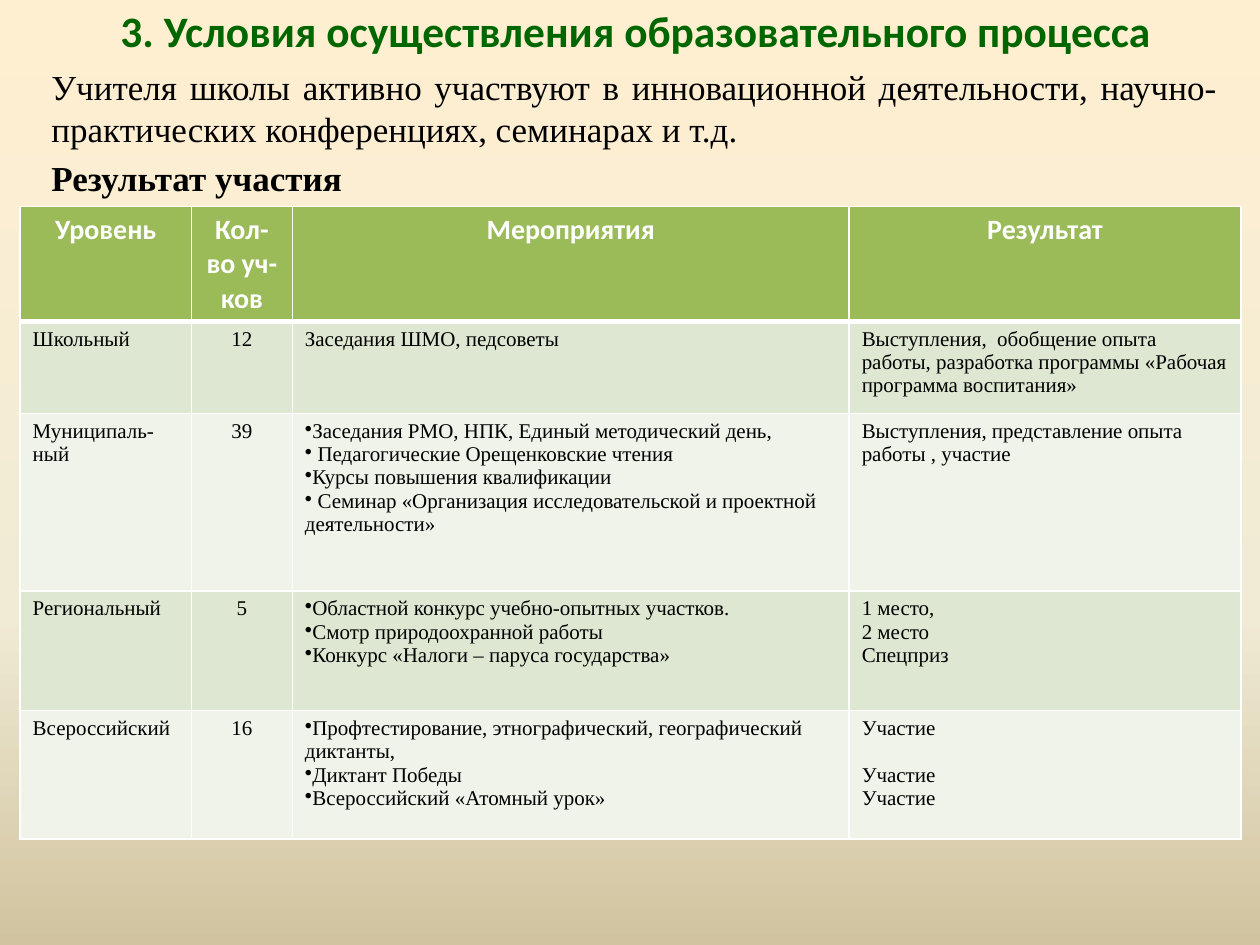
from copy import deepcopy
from dataclasses import dataclass

from lxml import etree
from pptx import Presentation
from pptx.dml.color import RGBColor
from pptx.enum.text import MSO_ANCHOR, MSO_AUTO_SIZE, PP_ALIGN
from pptx.oxml.ns import qn
from pptx.slide import Slide
from pptx.table import _Cell
from pptx.text.text import _Paragraph
from pptx.util import Inches, Pt

LEFT, CENTER, JUSTIFY = PP_ALIGN.LEFT, PP_ALIGN.CENTER, PP_ALIGN.JUSTIFY
MIDDLE = MSO_ANCHOR.MIDDLE
NO_FIT = MSO_AUTO_SIZE.NONE


@dataclass(frozen=True)
class TextStyle:
    """Font, size, colour and weight of a run."""
    font: str
    size: float
    color: str
    bold: bool = False


@dataclass(frozen=True)
class Theme:
    """Colours and type styles of the slide."""
    title: TextStyle = TextStyle("Calibri", 24.8, "006600", True)
    body: TextStyle = TextStyle("Times New Roman", 20, "000000")
    strong: TextStyle = TextStyle("Times New Roman", 20, "000000", True)
    header: TextStyle = TextStyle("Calibri", 16, "FFFFFF", True)
    cell: TextStyle = TextStyle("Times New Roman", 12, "000000")
    header_fill: str = "9BBB59"
    bands: tuple[str, str] = ("DEE7D1", "EFF3EA")
    border: str = "FFFFFF"
    background: tuple[tuple[float, str], ...] = (
        (0, "FFEFD1"), (0.65, "F0EBD5"), (1, "D1C39F"))


@dataclass(frozen=True)
class Level:
    """One table row: level, participants, events and results."""
    name: str
    count: str
    events: tuple[str, ...]
    results: tuple[str, ...]
    height: float
    bulleted: bool = True
    result_gap: float = 0


THEME = Theme()
TITLE = "3. Условия осуществления образовательного процесса"
INTRO = (
    ("Учителя школы активно участвуют в инновационной деятельности, "
     "научно-практических конференциях, семинарах и т.д.", THEME.body),
    ("Результат участия", THEME.strong),
)
HEADERS = ("Уровень", "Кол-во уч-ков", "Мероприятия", "Результат")
COLUMN_WIDTHS = (1.36, 0.8, 4.42, 3.11)
HEADER_HEIGHT = 0.91
LEVELS = (
    Level("Школьный", "12", ("Заседания ШМО, педсоветы",),
          ("Выступления,  обобщение опыта работы, разработка программы "
           "«Рабочая программа воспитания»",), 0.73, bulleted=False),
    Level("Муниципаль-ный", "39",
          ("Заседания РМО, НПК, Единый методический день,",
           " Педагогические Орещенковские чтения",
           "Курсы повышения квалификации",
           " Семинар «Организация исследовательской и проектной деятельности»"),
          ("Выступления, представление опыта работы , участие",), 1.41),
    Level("Региональный", "5",
          ("Областной конкурс учебно-опытных участков.",
           "Смотр природоохранной работы",
           "Конкурс «Налоги – паруса государства»"),
          ("1 место,", "2 место", "Спецприз"), 0.95),
    Level("Всероссийский", "16",
          ("Профтестирование, этнографический, географический диктанты,",
           "Диктант Победы",
           "Всероссийский «Атомный урок»"),
          ("Участие", "Участие", "Участие"), 1.02, result_gap=13.3),
)


def add_run(p: _Paragraph, text: str, style: TextStyle) -> None:
    """Append a styled run to a paragraph."""
    r = p.add_run()
    r.text = text
    r.font.name = style.font
    r.font.size = Pt(style.size)
    r.font.bold = style.bold
    r.font.color.rgb = RGBColor.from_string(style.color)


def set_background(s: Slide) -> None:
    """Fill the slide background with a vertical gradient."""
    fill = s.background.fill
    fill.gradient()
    fill.gradient_angle = 270
    stops = s._element.find(".//" + qn("a:gsLst"))
    stops.append(deepcopy(stops[-1]))
    for stop, (position, color) in zip(fill.gradient_stops, THEME.background):
        stop.position = position
        stop.color.rgb = RGBColor.from_string(color)


def add_title(s: Slide) -> None:
    """Place and format the slide title."""
    sp = s.shapes.title
    sp.left, sp.top = Inches(0.55), Inches(0)
    sp.width, sp.height = Inches(9), Inches(0.56)
    tf = sp.text_frame
    tf.word_wrap, tf.auto_size, tf.vertical_anchor = True, NO_FIT, MIDDLE
    p = tf.paragraphs[0]
    p.alignment, p.line_spacing = CENTER, 0.8
    add_run(p, TITLE, THEME.title)


def add_intro(s: Slide) -> None:
    """Add the introductory paragraphs above the table."""
    sp = s.shapes.add_textbox(Inches(0.31), Inches(0.47), Inches(9.45), Inches(1.41))
    tf = sp.text_frame
    tf.word_wrap = True
    for i, (text, style) in enumerate(INTRO):
        p = tf.add_paragraph() if i else tf.paragraphs[0]
        p.alignment, p.space_before = JUSTIFY, Pt(4)
        add_run(p, text, style)


def style_cell(cell: _Cell, fill: str, top: float = 1, bottom: float = 1) -> None:
    """Set the borders and fill of a cell."""
    tc_pr = cell._tc.get_or_add_tcPr()
    for side, width in (("L", 1), ("R", 1), ("T", top), ("B", bottom)):
        ln = etree.SubElement(tc_pr, qn(f"a:ln{side}"), w=str(Pt(width)))
        solid = etree.SubElement(ln, qn("a:solidFill"))
        etree.SubElement(solid, qn("a:srgbClr"), val=THEME.border)
    cell.fill.solid()
    cell.fill.fore_color.rgb = RGBColor.from_string(fill)


def write_cell(cell: _Cell, lines: tuple[str, ...], style: TextStyle,
               align: PP_ALIGN = LEFT, bulleted: bool = False, gap: float = 0) -> None:
    """Write one paragraph per line, with a gap after the first."""
    tf = cell.text_frame
    for i, text in enumerate(lines):
        p = tf.add_paragraph() if i else tf.paragraphs[0]
        p.alignment = align
        if gap and i == 1:
            p.space_before = Pt(gap)
        if bulleted:
            p_pr = p._p.get_or_add_pPr()
            p_pr.set("marL", "0")
            p_pr.set("indent", "0")
            etree.SubElement(p_pr, qn("a:buChar"), char="•")
        add_run(p, text, style)


def add_results_table(s: Slide) -> None:
    """Add the table of participation results."""
    heights = (HEADER_HEIGHT, *(level.height for level in LEVELS))
    table = s.shapes.add_table(
        len(heights), len(COLUMN_WIDTHS), Inches(0.16), Inches(1.64),
        Inches(sum(COLUMN_WIDTHS)), Inches(sum(heights))).table
    table.horz_banding = False
    for column, width in zip(table.columns, COLUMN_WIDTHS):
        column.width = Inches(width)
    for row, height in zip(table.rows, heights):
        row.height = Inches(height)
    for cell, text in zip(table.rows[0].cells, HEADERS):
        style_cell(cell, THEME.header_fill, bottom=3)
        write_cell(cell, (text,), THEME.header, CENTER)
    for i, level in enumerate(LEVELS):
        name, count, events, results = cells = tuple(table.rows[i + 1].cells)
        for cell in cells:
            style_cell(cell, THEME.bands[i % 2], top=1 if i else 3)
        write_cell(name, (level.name,), THEME.cell)
        write_cell(count, (level.count,), THEME.cell, CENTER)
        write_cell(events, level.events, THEME.cell, bulleted=level.bulleted)
        write_cell(results, level.results, THEME.cell, gap=level.result_gap)


def main() -> None:
    """Build and save the slide."""
    prs = Presentation()
    prs.slide_width, prs.slide_height = Inches(10), Inches(7.5)
    s = prs.slides.add_slide(prs.slide_layouts[5])
    set_background(s)
    add_title(s)
    add_intro(s)
    add_results_table(s)
    prs.save("out.pptx")


if __name__ == "__main__":
    main()
